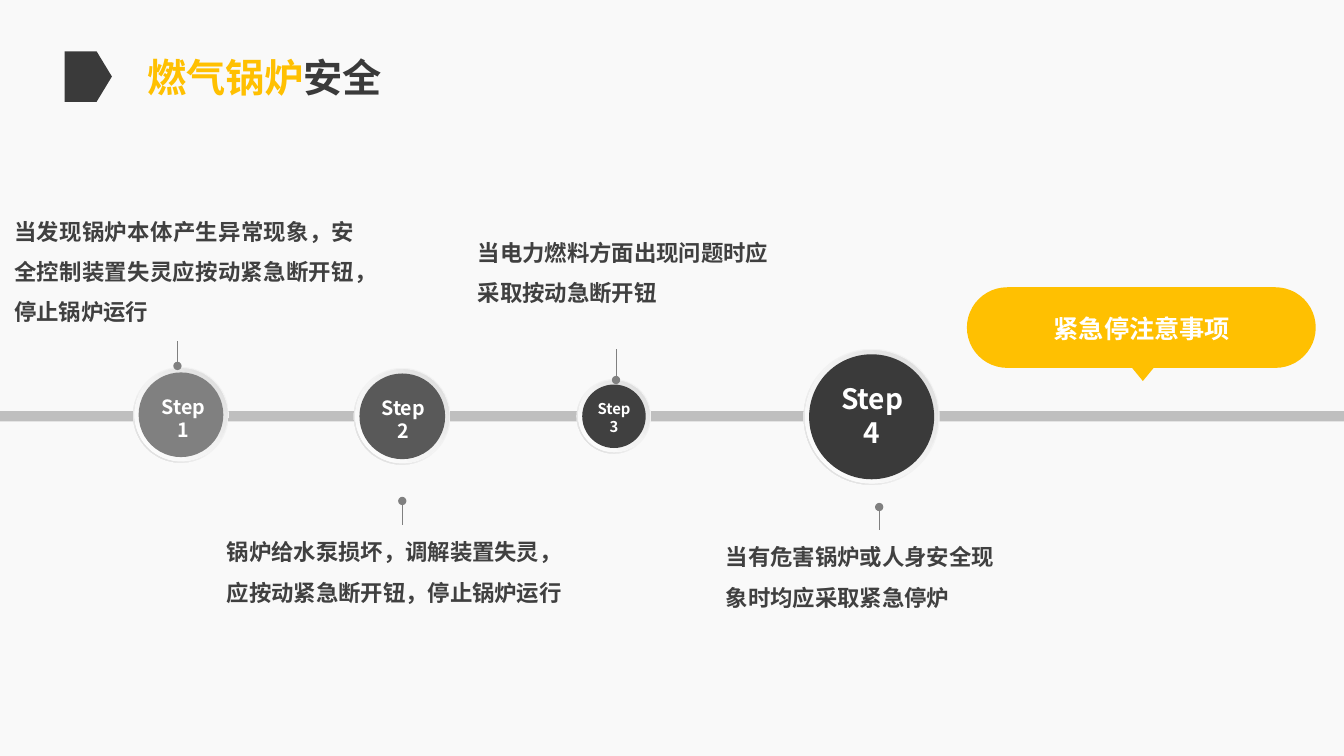
from copy import deepcopy

from lxml import etree
from pptx import Presentation
from pptx.dml.color import RGBColor
from pptx.enum.shapes import MSO_CONNECTOR, MSO_SHAPE
from pptx.enum.text import MSO_ANCHOR, PP_ALIGN
from pptx.oxml.ns import qn
from pptx.util import Inches, Pt

FONT = "Noto Sans CJK SC"
PAPER = RGBColor(0xF9, 0xF9, 0xF9)
WHITE = RGBColor(0xFF, 0xFF, 0xFF)
PALE = RGBColor(0xF2, 0xF2, 0xF2)
SHADE = RGBColor(0xD9, 0xD9, 0xD9)
RAIL = RGBColor(0xBF, 0xBF, 0xBF)
GREY = RGBColor(0x80, 0x80, 0x80)
SLATE = RGBColor(0x59, 0x59, 0x59)
INK = RGBColor(0x40, 0x40, 0x40)
DARK = RGBColor(0x3A, 0x3A, 0x3A)
GOLD = RGBColor(0xFF, 0xC0, 0x01)

RECT = MSO_SHAPE.RECTANGLE
PILL = MSO_SHAPE.ROUNDED_RECTANGLE
WEDGE = MSO_SHAPE.ISOSCELES_TRIANGLE
ARROW = MSO_SHAPE.PENTAGON
OVAL = MSO_SHAPE.OVAL
DONUT = MSO_SHAPE.DONUT
STRAIGHT = MSO_CONNECTOR.STRAIGHT
LEFT, CENTER, JUSTIFY = PP_ALIGN.LEFT, PP_ALIGN.CENTER, PP_ALIGN.JUSTIFY
TOP, MIDDLE = MSO_ANCHOR.TOP, MSO_ANCHOR.MIDDLE

STEPS = [
    ((1.32, 3.64, 0.95), (1.82, 4.15), GREY, 14),
    ((3.51, 3.65, 0.96), (4.0, 4.16), SLATE, 14),
    ((5.72, 3.76, 0.74), (6.09, 4.14), INK, 10.6),
    ((7.97, 3.46, 1.35), (8.65, 4.12), DARK, 20),
]
NOTES = [
    ((0.01, 2.03, 3.64, 1.2), (1.76, 3.63, 3.38), JUSTIFY,
     "当发现锅炉本体产生异常现象，安全控制装置失灵应按动紧急断开钮，停止锅炉运行"),
    ((4.61, 2.24, 3.24, 0.81), (6.11, 3.77, 3.46), LEFT,
     "当电力燃料方面出现问题时应采取按动急断开钮"),
    ((2.12, 5.21, 3.7, 0.81), (3.99, 4.97, 5.21), LEFT,
     "锅炉给水泵损坏，调解装置失灵，应按动紧急断开钮，停止锅炉运行"),
    ((7.07, 5.26, 2.97, 0.81), (8.72, 5.03, 5.26), LEFT,
     "当有危害锅炉或人身安全现象时均应采取紧急停炉"),
]


def add_form(slide, kind, box, color=None, adjust=None):
    form = slide.shapes.add_shape(kind, *map(Inches, box))
    form.shadow.inherit = False
    form.line.fill.background()
    if adjust is not None:
        form.adjustments[0] = adjust
    if color is not None:
        form.fill.solid()
        form.fill.fore_color.rgb = color
    return form


def blend(form, colors, middle, angle):
    form.fill.gradient()
    form.fill.gradient_angle = angle
    stops = form._element.spPr.find(".//" + qn("a:gsLst"))
    stops.insert(1, deepcopy(stops[0]))
    for stop, color, place in zip(form.fill.gradient_stops, colors, (0, middle, 1)):
        stop.color.rgb = color
        stop.position = place


def add_text(slide, box, lines, size, color, align=CENTER, anchor=TOP,
             pad=(0.1, 0.05), space=None):
    frame = slide.shapes.add_textbox(*map(Inches, box)).text_frame
    frame.word_wrap = True
    frame.vertical_anchor = anchor
    frame.margin_left = frame.margin_right = Inches(pad[0])
    frame.margin_top = frame.margin_bottom = Inches(pad[1])
    frame.text = "\n".join(lines)
    for para in frame.paragraphs:
        para.alignment = align
        para.line_spacing = space
        font = para.font
        font.name, font.size, font.bold = FONT, Pt(size), True
        font.color.rgb = color
        base = para._p.pPr.find(qn("a:defRPr"))
        etree.SubElement(base, qn("a:ea"), typeface=FONT)
    return frame


def add_title(slide, box):
    left, top, width, height = box
    add_form(slide, ARROW, (left, top + 0.03, 0.47, 0.5), DARK, 0.322)
    frame = add_text(slide, box, ["燃气锅炉"], 28, GOLD)
    rest = frame.paragraphs[0].add_run()
    rest.text = "安全"
    rest.font.color.rgb = DARK


def add_step(slide, box, spot, color, size, number):
    left, top, width = box

    def inset(gap):
        return left + gap, top + gap, width - 2 * gap, width - 2 * gap

    ring = add_form(slide, DONUT, inset(0), adjust=0.049)
    blend(ring, (PALE, PALE, SHADE), 0.55, 225)
    rim = add_form(slide, OVAL, inset(0.015))
    blend(rim, (WHITE, PALE, SHADE), 0.51, 45)
    add_form(slide, OVAL, inset(0.055), color)
    x, y = spot
    label = (x - width / 2, y - width / 2, width, width)
    add_text(slide, label, ["Step", str(number)], size, WHITE,
             anchor=MIDDLE, pad=(0, 0))


def add_note(slide, box, stem, align, words):
    x, start, end = stem
    line = slide.shapes.add_connector(
        STRAIGHT, Inches(x), Inches(start), Inches(x), Inches(end))
    line.line.color.rgb = GREY
    line.line.width = Pt(0.5)
    props = line._element.spPr
    etree.SubElement(props.find(qn("a:ln")), qn("a:headEnd"), type="oval")
    etree.SubElement(props, qn("a:effectLst"))
    add_text(slide, box, [words], 16, INK, align, pad=(0.13, 0), space=1.5)


def add_callout(slide, box):
    left, top, width, height = box
    add_form(slide, PILL, box, GOLD, 0.5)
    tip = add_form(slide, WEDGE,
                   (left + width / 2 - 0.1, top + height - 0.01, 0.23, 0.14), GOLD)
    tip.rotation = 180
    add_text(slide, (left + 0.79, top + 0.22, 1.98, 0.38), ["紧急停注意事项"],
             18, WHITE, LEFT, pad=(0.07, 0.04))


def main():
    deck = Presentation()
    deck.slide_width, deck.slide_height = Inches(13.33), Inches(7.5)
    slide = deck.slides.add_slide(deck.slide_layouts[6])
    slide.background.fill.solid()
    slide.background.fill.fore_color.rgb = PAPER
    add_title(slide, (0.64, 0.48, 3.97, 0.57))
    add_form(slide, RECT, (0, 4.08, 13.33, 0.1), RAIL)
    for number, step in enumerate(STEPS, 1):
        add_step(slide, *step, number)
    for note in NOTES:
        add_note(slide, *note)
    add_callout(slide, (9.59, 2.85, 3.46, 0.8))
    deck.save("out.pptx")


if __name__ == "__main__":
    main()
